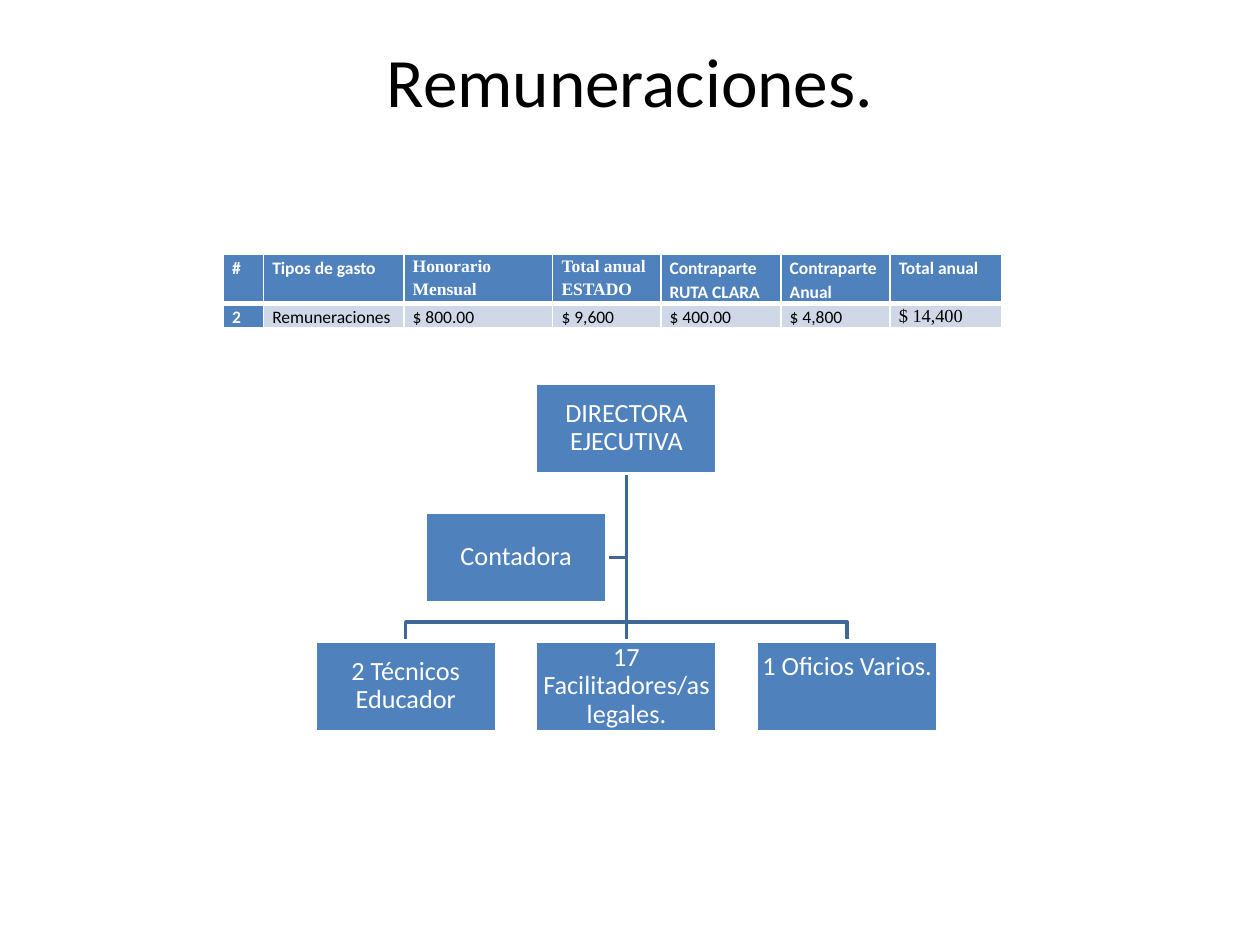
from pptx import Presentation
from pptx import util as u
from pptx.dml.color import RGBColor
from pptx.enum import shapes, text
from pptx.oxml import parse_xml
from pptx.oxml.ns import nsdecls

BLUE, PALE, LINE, WHITE, BLACK = "4F81BD", "D0D8E8", "3F6797", "FFFFFF", "000000"
SANS, SERIF = "Calibri", "Times New Roman"


def color(value):
    return RGBColor.from_string(value)


def apply(target, values):
    for name, value in values.items():
        setattr(target, name, value)


def add_border(cell, side, points):
    cell._tc.get_or_add_tcPr().append(parse_xml(
        f'<a:ln{side} {nsdecls("a")} w="{u.Pt(points)}"><a:solidFill>'
        f'<a:srgbClr val="{WHITE}"/></a:solidFill></a:ln{side}>'))


class SlideBuilder:
    """Holds the slide and the style shared by its elements."""

    box_width, box_height = 3.66, 1.83
    line_width = u.Pt(2)

    def __init__(self, deck):
        self.slide = deck.slides.add_slide(deck.slide_layouts[5])

    def add_lines(self, frame, lines, size, tint, font=SANS, bold=False,
                  align=text.PP_ALIGN.CENTER, spacing=1.0):
        for index, line in enumerate(lines):
            para = frame.add_paragraph() if index else frame.paragraphs[0]
            apply(para, {"alignment": align, "line_spacing": spacing})
            span = para.add_run()
            span.text = line
            apply(span.font, {"size": u.Pt(size), "name": font, "bold": bold})
            span.font.color.rgb = color(tint)

    def title(self, words):
        title = self.slide.shapes.title
        apply(title, {"left": u.Cm(1.27), "top": u.Cm(0.76),
                      "width": u.Cm(22.86), "height": u.Cm(3.18)})
        apply(title.text_frame, {"vertical_anchor": text.MSO_ANCHOR.TOP,
                                 "margin_top": 0, "word_wrap": True})
        self.add_lines(title.text_frame, [words], 39.6, BLACK)

    def table(self, left, top, widths, heights, rows):
        """Each cell is a pair: its lines and its format values."""
        table = self.slide.shapes.add_table(
            len(rows), len(widths), u.Cm(left), u.Cm(top),
            u.Cm(sum(widths)), u.Cm(sum(heights))).table
        table.horz_banding = False
        for column, width in zip(table.columns, widths):
            column.width = u.Cm(width)
        for r, (height, row) in enumerate(zip(heights, rows)):
            table.rows[r].height = u.Cm(height)
            for c, (lines, style) in enumerate(row):
                self.cell(table.cell(r, c), lines, style, r == 0, c == 0)

    def cell(self, cell, lines, style, is_header, is_first):
        strong = is_header or is_first
        for side in "LRTB":
            add_border(cell, side, 3 if (is_header and side == "B")
                       or (not is_header and side == "T") else 1)
        cell.fill.solid()
        cell.fill.fore_color.rgb = color(BLUE if strong else PALE)
        apply(cell, {"margin_left": u.Cm(0.18), "margin_right": u.Cm(0.18),
                     "margin_top": 0, "margin_bottom": 0})
        values = {"size": 10, "tint": WHITE if strong else BLACK, "bold": strong,
                  "align": text.PP_ALIGN.JUSTIFY, "spacing": 1.15}
        self.add_lines(cell.text_frame, lines, **{**values, **style})

    def box(self, left, top, words, anchor=text.MSO_ANCHOR.MIDDLE, margin_top=0.03):
        box = self.slide.shapes.add_shape(
            shapes.MSO_SHAPE.RECTANGLE, u.Cm(left), u.Cm(top),
            u.Cm(self.box_width), u.Cm(self.box_height))
        box.shadow.inherit = False
        box.fill.solid()
        box.fill.fore_color.rgb = color(BLUE)
        self.outline(box, WHITE)
        margin = u.Cm(0.03)
        apply(box.text_frame, {"word_wrap": True, "vertical_anchor": anchor,
                               "margin_left": margin, "margin_right": margin,
                               "margin_top": u.Cm(margin_top), "margin_bottom": margin})
        self.add_lines(box.text_frame, [words], 15, WHITE, spacing=0.9)
        return box

    def outline(self, shape, tint):
        shape.line.color.rgb = color(tint)
        shape.line.width = self.line_width

    def send_back(self, shape):
        self.slide.shapes._spTree.insert(2, shape._element)

    def branch(self, points):
        """Draws a bent line through points given in centimetres."""
        start, *rest = [(u.Cm(x), u.Cm(y)) for x, y in points]
        builder = self.slide.shapes.build_freeform(*start)
        builder.add_line_segments(rest, close=False)
        branch = builder.convert_to_shape()
        branch.shadow.inherit = False
        branch.fill.background()
        self.outline(branch, LINE)
        self.send_back(branch)

    def straight(self, upper, lower):
        link = self.slide.shapes.add_connector(shapes.MSO_CONNECTOR.STRAIGHT, 0, 0, 0, 0)
        link.begin_connect(upper, 2)
        link.end_connect(lower, 0)
        self.outline(link, LINE)
        link._element.spPr.append(parse_xml(f'<a:effectLst {nsdecls("a")}/>'))
        self.send_back(link)


def add_costs(page):
    left = {"align": text.PP_ALIGN.LEFT}
    serif = {"font": SERIF}
    header = [(["#"], {}), (["Tipos de gasto"], {}), (["Honorario Mensual"], serif),
              (["Total anual", "ESTADO"], serif), (["Contraparte RUTA CLARA"], {}),
              (["Contraparte Anual"], {}), (["Total anual"], {})]
    costs = [(["2"], {}), (["Remuneraciones"], {})]
    costs += [([amount], left) for amount in ("$ 800.00", "$ 9,600", "$ 400.00", "$ 4,800")]
    costs.append((["$ 14,400"], {"font": SERIF, "size": 10.5}))
    page.table(4.5, 5.13, [0.81, 2.83, 3, 2.18, 2.42, 2.2, 2.25], [0.95, 0.5],
               [header, costs])


def add_chart_of_posts(page):
    left, top, step, level = 10.8, 7.72, 4.45, 2.6
    center = left + page.box_width / 2
    start = (center, top + page.box_height)
    staff_top = top + 2 * level
    bus = staff_top - 0.38

    director = page.box(left, top, "DIRECTORA EJECUTIVA")
    assistant_left = left - step / 2
    page.box(assistant_left, top + level, "Contadora")
    page.box(left - step, staff_top, "2 Técnicos Educador")
    facilitators = page.box(left, staff_top, "17 Facilitadores/as legales.")
    page.box(left + step, staff_top, "1 Oficios Varios.", text.MSO_ANCHOR.TOP, 0.25)

    page.straight(director, facilitators)
    for x in (center - step, center + step):
        page.branch([start, (center, bus), (x, bus), (x, staff_top)])
    middle = top + level + page.box_height / 2
    page.branch([start, (center, middle), (assistant_left + page.box_width, middle)])


def main():
    deck = Presentation()
    deck.slide_width, deck.slide_height = u.Cm(25.4), u.Cm(19.05)
    page = SlideBuilder(deck)
    page.title("Remuneraciones.")
    add_costs(page)
    add_chart_of_posts(page)
    deck.save("out.pptx")


if __name__ == "__main__":
    main()
